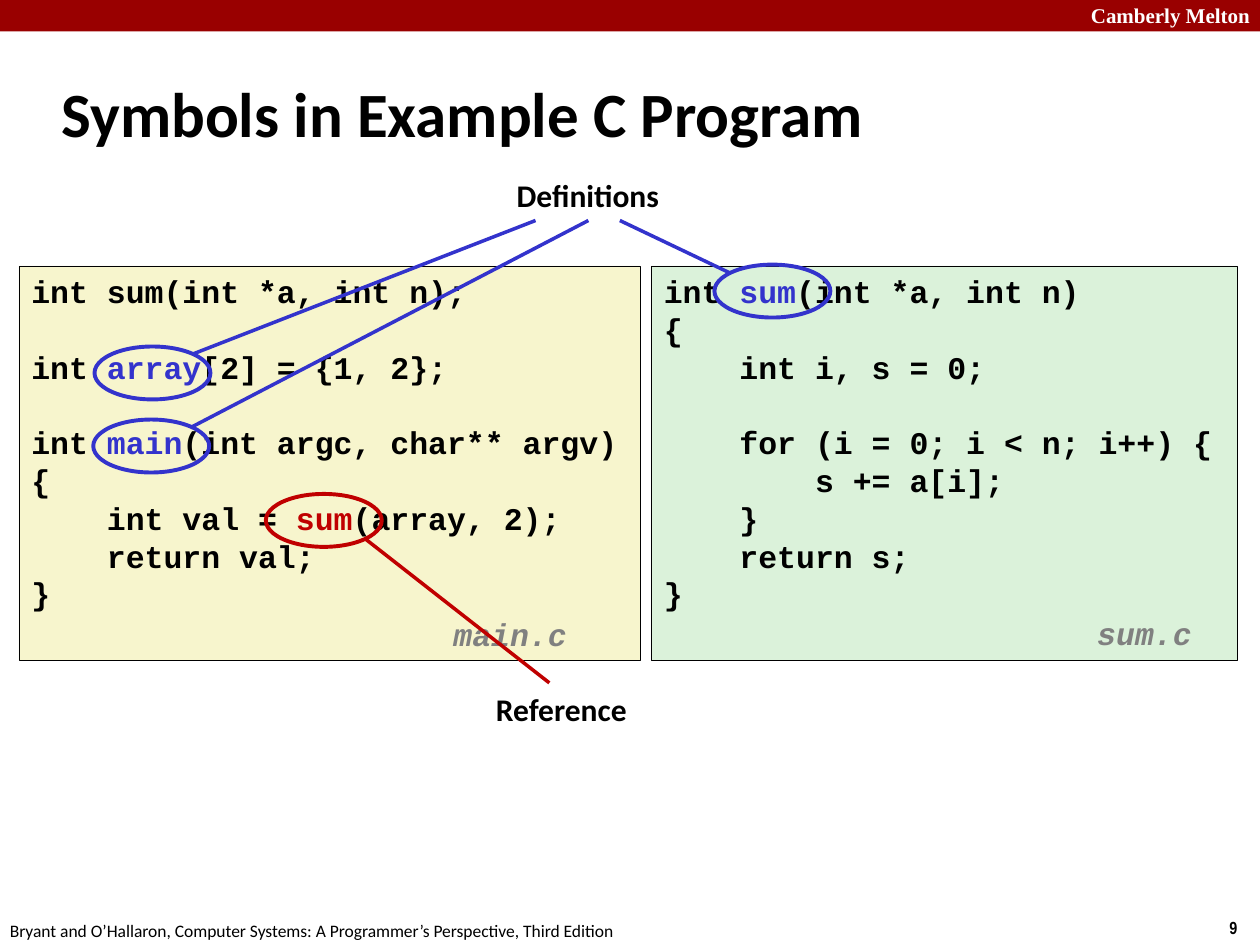
"""Build the slide on symbols in an example C program."""
from lxml import etree
from pptx import Presentation
from pptx.dml.color import RGBColor
from pptx.enum.shapes import MSO_CONNECTOR, MSO_SHAPE
from pptx.enum.text import MSO_ANCHOR, PP_ALIGN
from pptx.oxml.ns import qn
from pptx.util import Inches, Pt

RECT, OVAL = MSO_SHAPE.RECTANGLE, MSO_SHAPE.OVAL
STRAIGHT = MSO_CONNECTOR.STRAIGHT
TOP, MIDDLE = MSO_ANCHOR.TOP, MSO_ANCHOR.MIDDLE
LEFT, CENTER, RIGHT = PP_ALIGN.LEFT, PP_ALIGN.CENTER, PP_ALIGN.RIGHT
BLACK, WHITE, GRAY = "000000", "FFFFFF", "808080"
BLUE, RED = "3333CC", "C00000"
CODE_LINE = Pt(21.6)


def rgb(color):
    return RGBColor.from_string(color)


def add_run(p, text, size, font, color=BLACK, bold=True, italic=False):
    r = p.add_run()
    r.text = text
    r.font.size = Pt(size)
    r.font.name = font
    r.font.bold = bold
    r.font.italic = italic
    r.font.color.rgb = rgb(color)


prs = Presentation()
prs.slide_width, prs.slide_height = Inches(10), Inches(7.5)
s = prs.slides.add_slide(prs.slide_layouts[6])

bar = s.shapes.add_shape(RECT, 0, 0, Inches(10), Inches(0.25))
bar.shadow.inherit = False
bar.fill.solid()
bar.fill.fore_color.rgb = rgb("990000")
bar.line.fill.background()

panels = [
    (0.15, 2.11, 4.93, 3.13, "F7F5CD", [
        (0, 0, [("int sum(int *a, int n);", BLACK)]),
        (0, 1, [("int ", BLACK), ("array", BLUE), ("[2] = {1, 2};", BLACK)]),
        (0, 1, [("int ", BLACK), ("main", BLUE),
                ("(int argc, char** argv)", BLACK)]),
        (0, 0, [("{", BLACK)]),
        (1, 0, [("int val = ", BLACK), ("sum", RED), ("(array, 2);", BLACK)]),
        (1, 0, [("return val;", BLACK)]),
        (0, 0, [("}", BLACK)]),
    ]),
    (5.17, 2.11, 4.65, 3.13, "DBF2DA", [
        (0, 0, [("int ", BLACK), ("sum", BLUE), ("(int *a, int n)", BLACK)]),
        (0, 0, [("{", BLACK)]),
        (1, 0, [("int i, s = 0;", BLACK)]),
        (1, 1, [("for (i = 0; i < n; i++) {", BLACK)]),
        (2, 0, [("s += a[i];", BLACK)]),
        (1, 0, [("}", BLACK)]),
        (1, 0, [("return s;", BLACK)]),
        (0, 0, [("}", BLACK)]),
    ]),
]
for x, y, w, h, fill, lines in panels:
    sp = s.shapes.add_shape(RECT, Inches(x), Inches(y), Inches(w), Inches(h))
    sp.shadow.inherit = False
    sp.fill.solid()
    sp.fill.fore_color.rgb = rgb(fill)
    sp.line.color.rgb = rgb(BLACK)
    sp.line.width = Pt(0.25)
    tf = sp.text_frame
    tf.word_wrap = False
    tf.vertical_anchor = TOP
    for i, (level, blanks, runs) in enumerate(lines):
        p = tf.add_paragraph() if i else tf.paragraphs[0]
        p.alignment = LEFT
        p.line_spacing = CODE_LINE
        p.space_before = CODE_LINE * blanks
        p._p.get_or_add_pPr().set("marL", str(Inches(0.6 * level)))
        for text, color in runs:
            add_run(p, text, 18, "Courier New", color)

labels = [
    (7.52, -0.03, 2.5, 0.3, RIGHT, TOP, 1,
     ("Camberly Melton", 12, "Times New Roman", WHITE)),
    (9.66, 7.23, 0.34, 0.27, LEFT, TOP, 1, ("9", 10, "Arial Narrow")),
    (-0.02, 7.25, 5.08, 0.27, LEFT, TOP, 1,
     ("Bryant and O’Hallaron, Computer Systems: A Programmer’s Perspective, "
      "Third Edition", 10, "Calibri", BLACK, False)),
    (0.39, 0.48, 8.3, 0.83, LEFT, MIDDLE, 1,
     ("Symbols in Example C Program", 36, "Calibri")),
    (3.5, 4.86, 1.17, 0.39, LEFT, TOP, 0.94,
     ("main.c", 18, "Courier New", GRAY, True, True)),
    (8.61, 4.85, 1.02, 0.39, LEFT, TOP, 0.94,
     ("sum.c", 18, "Courier New", GRAY, True, True)),
    (3.99, 1.35, 1.35, 0.4, CENTER, TOP, 1, ("Definitions", 18, "Calibri")),
    (3.82, 5.43, 1.27, 0.4, CENTER, TOP, 1, ("Reference", 18, "Calibri")),
]
for x, y, w, h, align, anchor, spacing, run in labels:
    tb = s.shapes.add_textbox(Inches(x), Inches(y), Inches(w), Inches(h))
    tf = tb.text_frame
    tf.word_wrap = w in (2.5, 8.3)
    tf.vertical_anchor = anchor
    p = tf.paragraphs[0]
    p.alignment = align
    p.line_spacing = spacing
    add_run(p, *run)

for x, y, color in [(0.75, 2.75, BLUE), (0.74, 3.33, BLUE),
                    (5.67, 2.1, BLUE), (2.11, 3.92, RED)]:
    ring = s.shapes.add_shape(OVAL, Inches(x), Inches(y),
                              Inches(0.92), Inches(0.42))
    ring.shadow.inherit = False
    ring.fill.background()
    ring.line.color.rgb = rgb(color)
    ring.line.width = Pt(2.25)

for x1, y1, x2, y2, color in [(1.53, 2.81, 4.25, 1.75, BLUE),
                              (1.52, 3.39, 4.67, 1.75, BLUE),
                              (5.8, 2.17, 4.92, 1.75, BLUE),
                              (2.89, 4.27, 4.36, 5.42, RED)]:
    ln = s.shapes.add_connector(STRAIGHT, Inches(x1), Inches(y1),
                                Inches(x2), Inches(y2))
    ln.line.color.rgb = rgb(color)
    ln.line.width = Pt(2)
    etree.SubElement(ln._element.spPr, qn("a:effectLst"))

prs.save("out.pptx")
